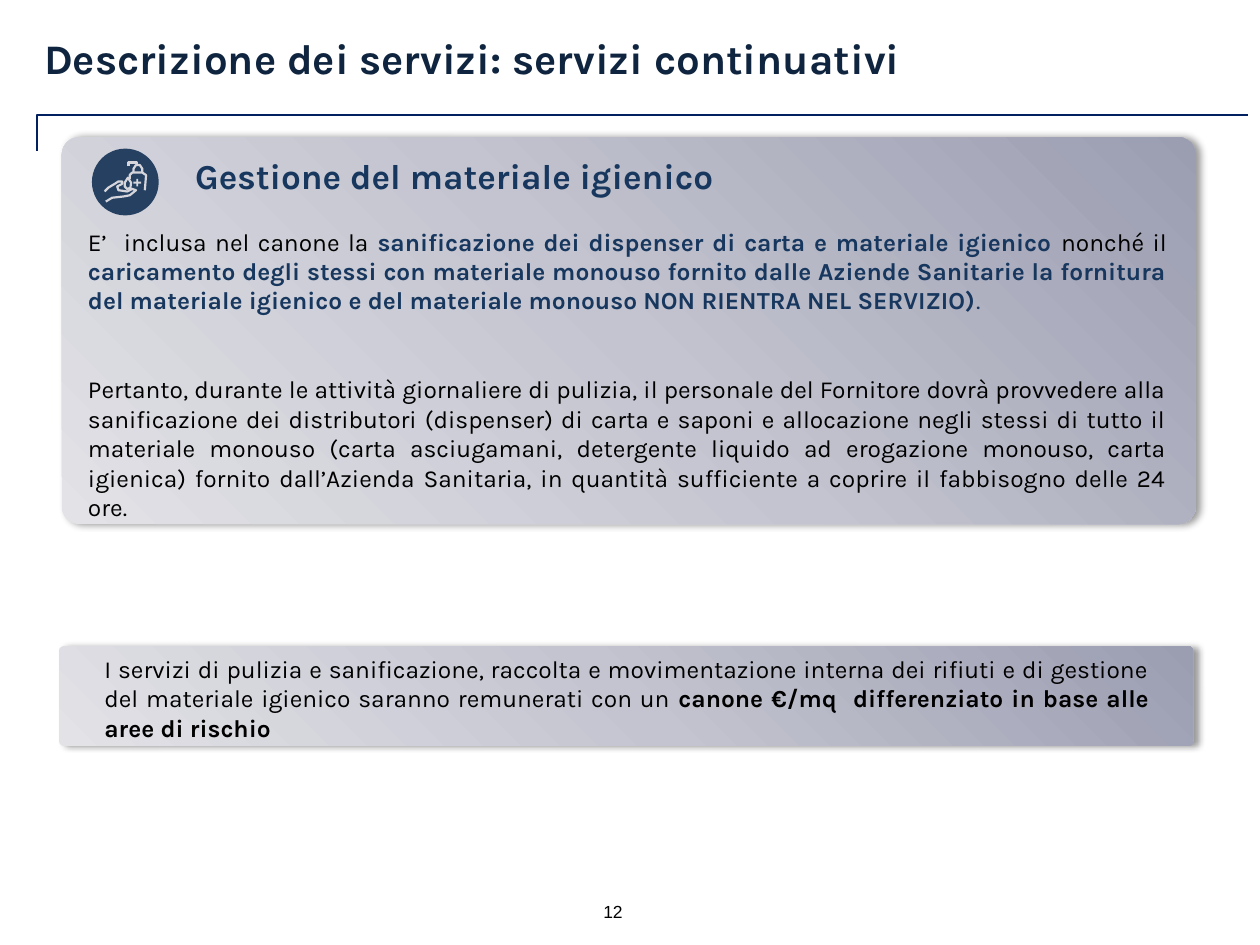
from dataclasses import dataclass

from lxml import etree
from pptx import Presentation
from pptx.dml.color import RGBColor
from pptx.enum import shapes, text
from pptx.oxml import ns
from pptx.util import Emu, Inches, Pt

SLIDE_W, SLIDE_H = Inches(10), Inches(7.5)
COL, ROW = SLIDE_W / 100, SLIDE_H / 75

BLACK = RGBColor(0x00, 0x00, 0x00)
NAVY = RGBColor(0x0F, 0x24, 0x3E)
BLUE = RGBColor(0x17, 0x37, 0x5E)
ICON_BLUE = RGBColor(0x25, 0x40, 0x61)
ICON_LINE = RGBColor(0xD5, 0xD5, 0xDB)
RULE_BLUE = RGBColor(0x00, 0x20, 0x60)
PANEL_STOPS = (
    (0, RGBColor(0x9B, 0x9D, 0xB1)),
    (50, RGBColor(0xC3, 0xC4, 0xCF)),
    (100, RGBColor(0xE2, 0xE2, 0xE7)),
)
JUSTIFY = text.PP_ALIGN.JUSTIFY


@dataclass(frozen=True)
class Box:
    col: float
    row: float
    cols: float
    rows: float

    def emu(self) -> tuple[Emu, Emu, Emu, Emu]:
        return (Emu(round(self.col * COL)), Emu(round(self.row * ROW)),
                Emu(round(self.cols * COL)), Emu(round(self.rows * ROW)))


@dataclass(frozen=True)
class Run:
    words: str
    color: RGBColor = BLACK
    bold: bool = False


@dataclass(frozen=True)
class Para:
    runs: tuple[Run, ...]
    size: float = 14
    font: str = "Karla"
    align: text.PP_ALIGN = JUSTIFY
    before: float = 0
    indent: float = 0
    spacing: float = 1.0


@dataclass(frozen=True)
class Stroke:
    points: tuple[tuple[float, float], ...]
    closed: bool = False


PANELS = (Box(4.7, 51.3, 90, 7.9), Box(4.9, 10.9, 90, 30.7))
ICON = Box(7.3, 11.8, 5.3, 5.3)
ICON_CROSS = Box(10.6, 14.2, 0.6, 0.6)
ICON_STROKES = (
    Stroke(((10.2, 13.2), (10.2, 12.9), (10.9, 12.9), (10.9, 13.1))),
    Stroke(((10.6, 13.7), (10.6, 13.4), (10.8, 13.1), (11.1, 13.1),
            (11.3, 13.4), (11.3, 13.7))),
    Stroke(((10.3, 14.2), (10.3, 13.9), (10.5, 13.7), (11.3, 13.7),
            (11.6, 13.9), (11.5, 15.1))),
    Stroke(((10.15, 14.1), (9.9, 14.5), (9.9, 14.8), (10.1, 15),
            (10.35, 14.9), (10.4, 14.5)), True),
    Stroke(((8.3, 15.2), (8.6, 14.9), (9.1, 14.6), (9.4, 14.4), (9.7, 14.4),
            (9.7, 14.6), (9.3, 14.8), (9.4, 15.1), (10.1, 15.2), (10.5, 15),
            (10.8, 15.1), (10.3, 15.5), (9.8, 15.6), (8.9, 15.7), (8.4, 16))),
)

TITLE = (Para((Run("Descrizione dei servizi: servizi continuativi", NAVY, True),),
              24, align=text.PP_ALIGN.LEFT, spacing=0.85),)
SERVICE = (
    Para((Run("Gestione del materiale igienico", BLUE, True),), 20, indent=8.5),
    Para((
        Run("E’  inclusa nel canone la "),
        Run("sanificazione dei dispenser di carta e materiale igienico ", BLUE, True),
        Run("nonché il "),
        Run("caricamento degli stessi con materiale monouso fornito dalle Aziende "
            "Sanitarie la fornitura del materiale igienico e del materiale monouso "
            "NON RIENTRA NEL SERVIZIO)", BLUE, True),
        Run(".", BLUE),
    ), before=17),
    Para((Run(
        "Pertanto, durante le attività giornaliere di pulizia, il personale del "
        "Fornitore dovrà provvedere alla sanificazione dei distributori (dispenser) "
        "di carta e saponi e allocazione negli stessi di tutto il materiale monouso "
        "(carta asciugamani, detergente liquido ad erogazione monouso, carta igienica) "
        "fornito dall’Azienda Sanitaria, in quantità sufficiente a coprire il "
        "fabbisogno delle 24 ore."),), before=34),
)
PAYMENT = (Para((
    Run("I servizi di pulizia e sanificazione, raccolta e movimentazione interna dei "
        "rifiuti e di gestione del materiale igienico saranno remunerati con un "),
    Run("canone €/mq  differenziato in base alle aree di rischio", bold=True),
)),)
PAGE = (Para((Run("12"),), 10, "Arial", text.PP_ALIGN.LEFT),)


def add_child(parent, tag: str, **attrs):
    child = etree.SubElement(parent, ns.qn(f"a:{tag}"))
    for name, value in attrs.items():
        child.set(name, str(value))
    return child


def add_text(s, box: Box, paras: tuple[Para, ...], inset: bool = True) -> None:
    tf = s.shapes.add_textbox(*box.emu()).text_frame
    tf.word_wrap = True
    if not inset:
        tf.margin_left = tf.margin_right = tf.margin_bottom = 0
        tf.margin_top = Inches(0.04)
    for i, para in enumerate(paras):
        p = tf.add_paragraph() if i else tf.paragraphs[0]
        p.alignment = para.align
        p.line_spacing = para.spacing
        if para.before:
            p.space_before = Pt(para.before)
        if para.indent:
            p._p.get_or_add_pPr().set("indent", str(round(para.indent * COL)))
        for run in para.runs:
            r = p.add_run()
            r.text = run.words
            r.font.name = para.font
            r.font.size = Pt(para.size)
            r.font.bold = run.bold
            r.font.color.rgb = run.color


def add_panel(s, box: Box) -> None:
    sp = s.shapes.add_shape(shapes.MSO_SHAPE.ROUNDED_RECTANGLE, *box.emu())
    sp.adjustments[0] = 0.045
    sp.line.fill.background()
    sp.fill.gradient()
    grad = sp._element.spPr.find(ns.qn("a:gradFill"))
    for child in list(grad):
        grad.remove(child)
    stops = add_child(grad, "gsLst")
    for share, color in PANEL_STOPS:
        add_child(add_child(stops, "gs", pos=share * 1000), "srgbClr", val=color)
    path = add_child(grad, "path", path="circle")
    add_child(path, "fillToRect", l=100000, b=100000)
    sp.shadow.inherit = False
    effects = sp._element.spPr.find(ns.qn("a:effectLst"))
    shadow = add_child(effects, "outerShdw", blurRad=Pt(4), dist=Pt(3), dir=0,
                       algn="l", rotWithShape=0)
    add_child(add_child(shadow, "srgbClr", val=BLACK), "alpha", val=40000)


def add_plain(s, kind: shapes.MSO_SHAPE, box: Box, color: RGBColor):
    sp = s.shapes.add_shape(kind, *box.emu())
    sp.fill.solid()
    sp.fill.fore_color.rgb = color
    sp.line.fill.background()
    sp.shadow.inherit = False
    return sp


def add_stroke(s, stroke: Stroke) -> None:
    points = [(round(x * COL), round(y * ROW)) for x, y in stroke.points]
    builder = s.shapes.build_freeform(*points[0])
    builder.add_line_segments(points[1:], close=stroke.closed)
    sp = builder.convert_to_shape()
    sp.fill.background()
    sp.line.color.rgb = ICON_LINE
    sp.line.width = Pt(1.25)
    sp.shadow.inherit = False


def add_header_rule(s) -> None:
    left, top, width, height = Box(49.6, -37.5, 2.8, 96.1).emu()
    line = s.shapes.add_connector(shapes.MSO_CONNECTOR.ELBOW,
                                  left + width, top + height, left, top)
    line.line.color.rgb = RULE_BLUE
    line.line.width = Pt(1)
    props = line._element.spPr
    props.find(ns.qn("a:xfrm")).set("rot", str(90 * 60000))
    props.find(ns.qn("a:prstGeom")).set("prst", "bentConnector2")
    add_child(props, "effectLst")


def main() -> None:
    prs = Presentation()
    prs.slide_width, prs.slide_height = SLIDE_W, SLIDE_H
    s = prs.slides.add_slide(prs.slide_layouts[6])
    add_text(s, Box(46.9, 71, 4.7, 2.7), PAGE)
    add_header_rule(s)
    for panel in PANELS:
        add_panel(s, panel)
    add_text(s, Box(6, 11.8, 87.6, 30.3), SERVICE)
    add_plain(s, shapes.MSO_SHAPE.OVAL, ICON, ICON_BLUE)
    for stroke in ICON_STROKES:
        add_stroke(s, stroke)
    cross = add_plain(s, shapes.MSO_SHAPE.CROSS, ICON_CROSS, ICON_LINE)
    cross.adjustments[0] = 0.38
    add_text(s, Box(3.5, 2.8, 90, 5), TITLE, inset=False)
    add_text(s, Box(7.3, 51.4, 84.9, 10.4), PAYMENT)
    prs.save("out.pptx")


if __name__ == "__main__":
    main()
